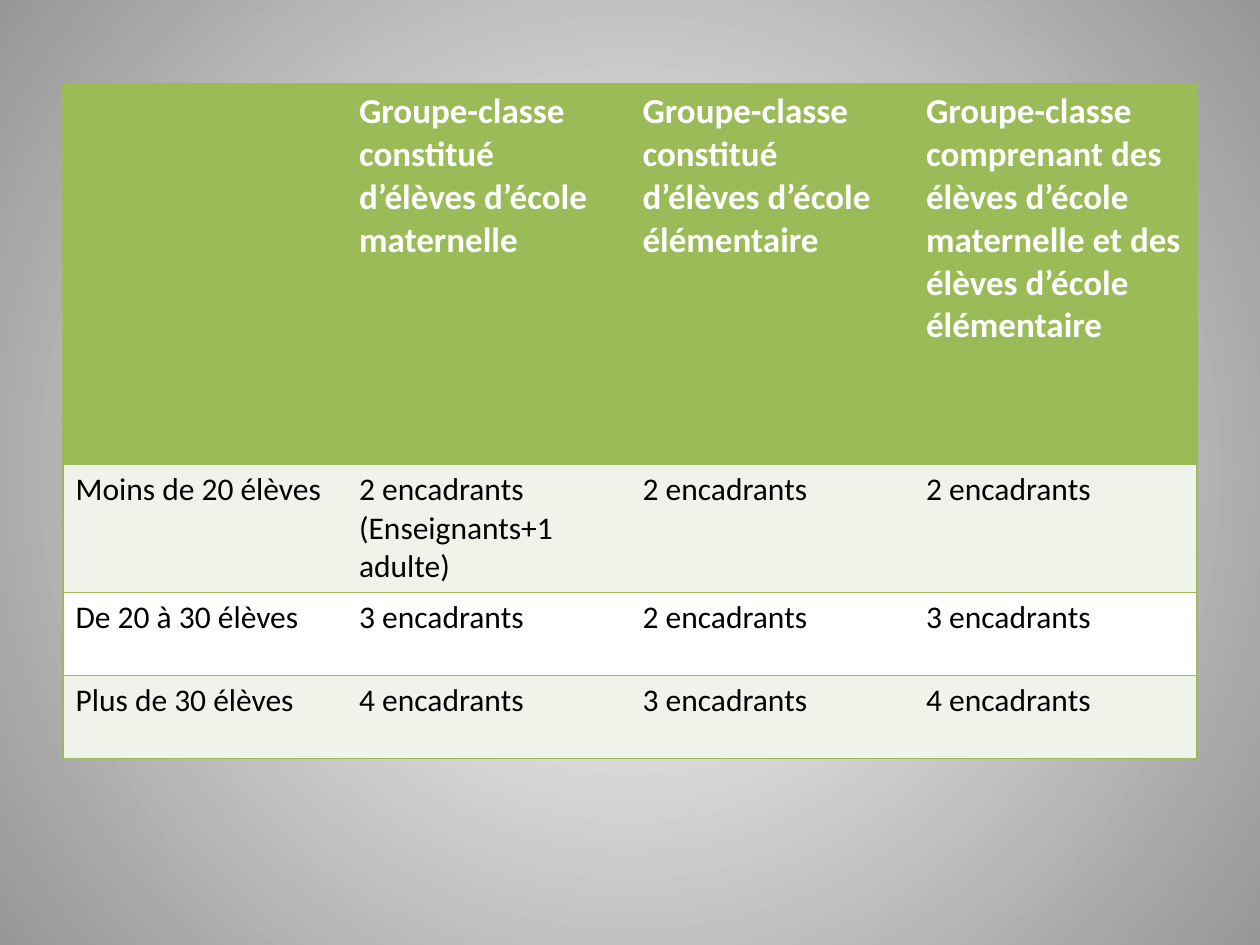
from dataclasses import dataclass

from lxml import etree
from pptx import Presentation
from pptx.dml.color import RGBColor
from pptx.oxml.ns import qn
from pptx.util import Pt

BLANK_LAYOUT = 6
NO_STYLE_NO_GRID = "{2D5ABB26-0587-4C30-8999-92F81FD0307C}"


@dataclass(frozen=True)
class Theme:
    font: str = "Calibri"
    header_size: int = 20
    body_size: int = 18
    border_width: int = 1
    green: str = "9BBB59"
    pale_green: str = "EFF3EA"
    white: str = "FFFFFF"
    black: str = "000000"
    backdrop_edge: str = "979797"


class SlideBuilder:
    def __init__(self, slide, theme):
        self.slide = slide
        self.theme = theme

    def radial_background(self, centre, edge):
        fill = self.slide.background.fill
        fill.gradient()
        for stop, colour in zip(fill.gradient_stops, (centre, edge)):
            stop.color.rgb = RGBColor.from_string(colour)
        gradient = next(self.slide.element.iter(qn("a:gradFill")))
        gradient.remove(gradient.find(qn("a:lin")))
        radial = etree.SubElement(gradient, qn("a:path"), path="circle")
        middle = dict.fromkeys("ltrb", "50000")
        etree.SubElement(radial, qn("a:fillToRect"), middle)

    def border(self, cell, sides):
        """Draw the given sides, named L, R, T, B in that order."""
        properties = cell._tc.get_or_add_tcPr()
        for side in sides:
            line = etree.SubElement(properties, qn(f"a:ln{side}"),
                                    w=str(Pt(self.theme.border_width)))
            solid = etree.SubElement(line, qn("a:solidFill"))
            etree.SubElement(solid, qn("a:srgbClr"), val=self.theme.green)

    def format_cell(self, cell, text, fill, size, colour, bold):
        cell.fill.solid()
        cell.fill.fore_color.rgb = RGBColor.from_string(fill)
        cell.text = text
        font = cell.text_frame.paragraphs[0].font
        font.name = self.theme.font
        font.size = Pt(size)
        font.bold = bold
        font.color.rgb = RGBColor.from_string(colour)

    def table(self, rows, left, top, column_width, row_heights):
        theme = self.theme
        column_count = len(rows[0])
        table = self.slide.shapes.add_table(
            len(rows), column_count, Pt(left), Pt(top),
            Pt(column_width * column_count), Pt(sum(row_heights))).table
        table._tbl.tblPr.find(qn("a:tableStyleId")).text = NO_STYLE_NO_GRID
        for column in table.columns:
            column.width = Pt(column_width)
        for r, (texts, height) in enumerate(zip(rows, row_heights)):
            table.rows[r].height = Pt(height)
            if r == 0:
                look = (theme.green, theme.header_size, theme.white, True)
            else:
                band = theme.pale_green if r % 2 else theme.white
                look = (band, theme.body_size, theme.black, False)
            for c, text in enumerate(texts):
                cell = table.cell(r, c)
                outer = {0: "L", column_count - 1: "R"}.get(c, "")
                self.border(cell, outer + "TB")
                self.format_cell(cell, text, *look)


def main():
    presentation = Presentation()
    presentation.slide_width = Pt(720)
    presentation.slide_height = Pt(540)
    theme = Theme()
    slide = presentation.slides.add_slide(
        presentation.slide_layouts[BLANK_LAYOUT])
    builder = SlideBuilder(slide, theme)
    builder.radial_background(theme.white, theme.backdrop_edge)

    supervision = [
        ["",
         "Groupe-classe constitué d’élèves d’école maternelle",
         "Groupe-classe constitué d’élèves d’école élémentaire",
         "Groupe-classe comprenant des élèves d’école maternelle "
         "et des élèves d’école élémentaire"],
        ["Moins de 20 élèves", "2 encadrants (Enseignants+1 adulte)",
         "2 encadrants", "2 encadrants"],
        ["De 20 à 30 élèves", "3 encadrants", "2 encadrants", "3 encadrants"],
        ["Plus de 30 élèves", "4 encadrants", "3 encadrants", "4 encadrants"],
    ]
    builder.table(supervision, left=36, top=48, column_width=162,
                  row_heights=[217.5, 73, 47.5, 47.5])
    presentation.save("out.pptx")


if __name__ == "__main__":
    main()
